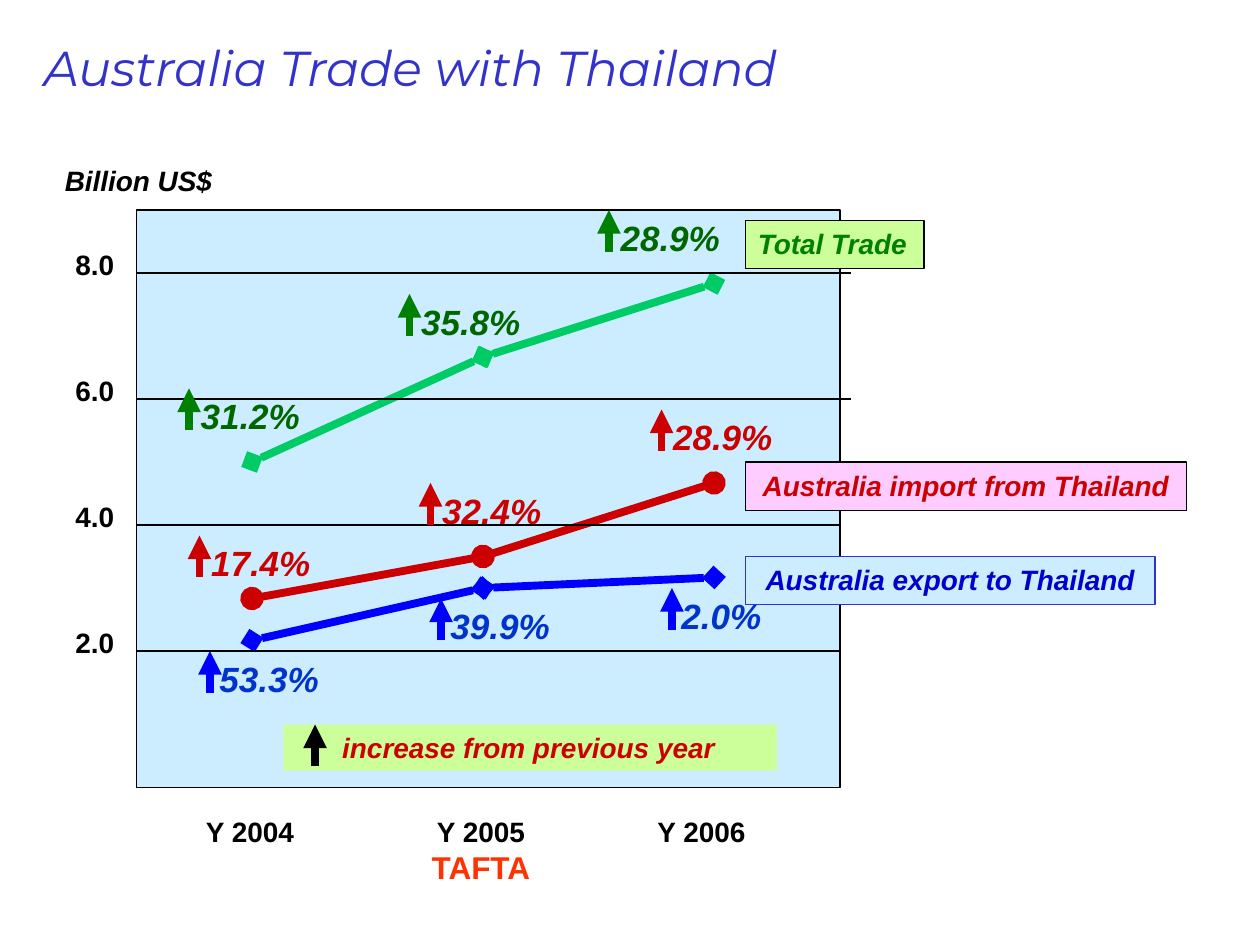
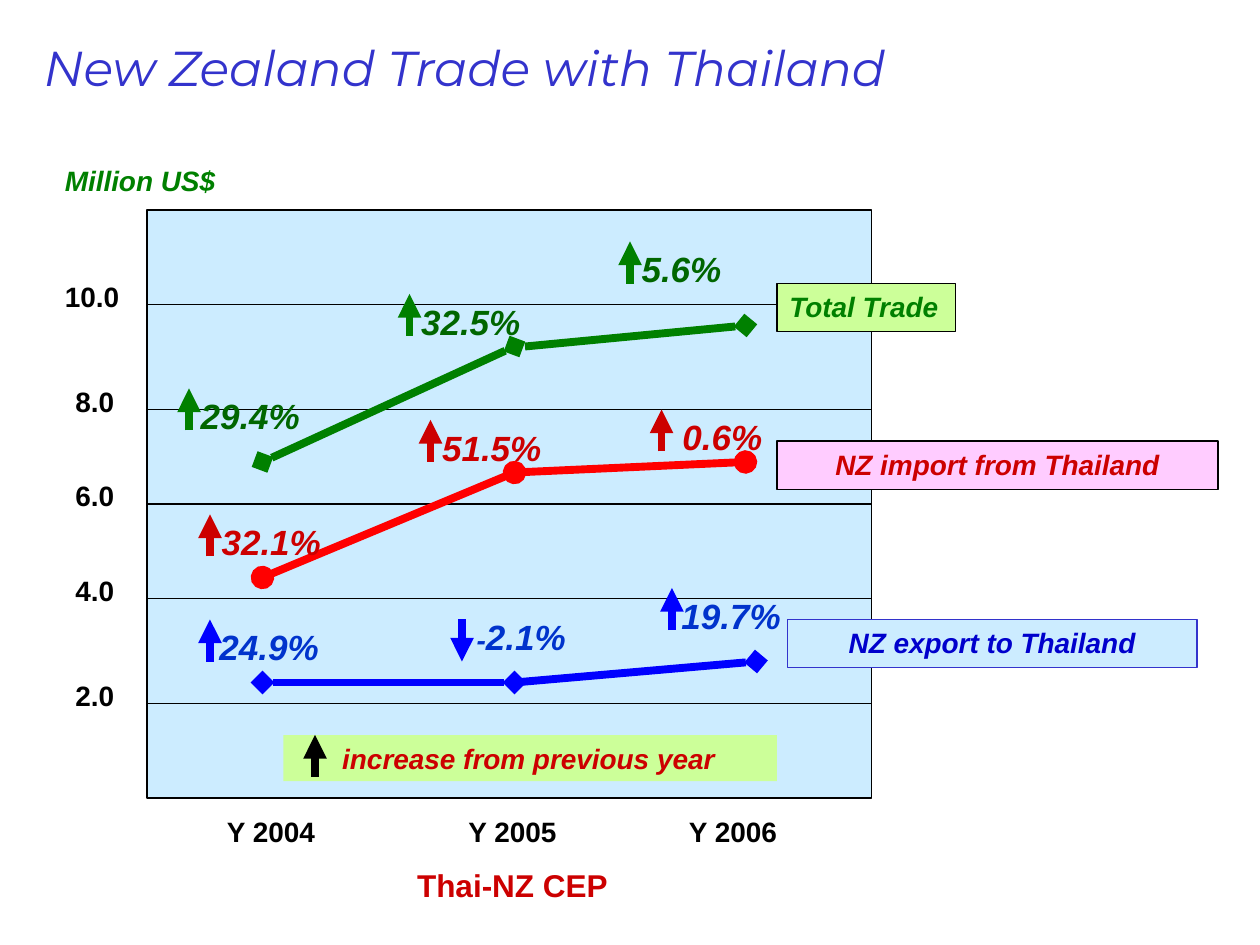
from dataclasses import dataclass
from itertools import pairwise

from lxml import etree
from pptx import Presentation
from pptx.dml.color import RGBColor
from pptx.enum.shapes import MSO_CONNECTOR, MSO_SHAPE
from pptx.enum.text import MSO_ANCHOR, PP_ALIGN
from pptx.oxml.ns import qn
from pptx.util import Pt

STRAIGHT = MSO_CONNECTOR.STRAIGHT
RECTANGLE = MSO_SHAPE.RECTANGLE
TOP, MIDDLE = MSO_ANCHOR.TOP, MSO_ANCHOR.MIDDLE
LEFT, CENTER = PP_ALIGN.LEFT, PP_ALIGN.CENTER
EMU_PER_PX = 7620


@dataclass(frozen=True)
class Theme:
    title_font: str = "Montserrat"
    body_font: str = "Arial"
    title_size: int = 28
    rate_size: int = 20
    note_size: int = 18
    body_size: int = 16
    hairline: float = 0.75
    trend_width: float = 4.5
    ink: str = "000000"
    title: str = "3333CC"
    panel: str = "CCECFF"
    lime: str = "CCFF99"
    pink: str = "FFCCFF"
    green: str = "008000"
    dark_green: str = "006600"
    bright_green: str = "00CC66"
    red: str = "CC0000"
    bright_red: str = "FF0000"
    orange: str = "FF3300"
    blue: str = "0000FF"
    label_blue: str = "0000CC"
    rate_blue: str = "0033CC"


THEME = Theme()


@dataclass(frozen=True)
class Box:
    x: int
    y: int
    w: int
    h: int

    def within(self, x, y, w, h):
        return Box(self.x + x, self.y + y, w, h)

    def emu(self):
        return [px(n) for n in (self.x, self.y, self.w, self.h)]


@dataclass(frozen=True)
class Flow:
    marker: str
    arrow: str
    rate_color: str
    rate_inset: int
    label_color: str
    label_fill: str
    label_line: str
    label_width: int
    label_align: int


TOTAL = Flow("diamond", THEME.green, THEME.dark_green, 21,
             THEME.green, THEME.lime, THEME.ink, 170, LEFT)
IMPORT = Flow("oval", THEME.red, THEME.red, 21,
              THEME.red, THEME.pink, THEME.ink, 420, CENTER)
EXPORT = Flow("diamond", THEME.blue, THEME.rate_blue, 19,
              THEME.label_blue, THEME.panel, THEME.title, 390, CENTER)


@dataclass(frozen=True)
class Series:
    flow: Flow
    color: str
    points: list
    label: str
    label_at: tuple
    rates: list
    gap: int = 0


@dataclass(frozen=True)
class Trade:
    title: str
    unit: str
    unit_color: str
    panel: Box
    grid: list
    overhangs: tuple
    grid_on_top: bool
    series: list
    legend_at: tuple
    years: list
    note: str
    note_color: str
    note_gap: int


def px(n):
    return int(n * EMU_PER_PX)


def rgb(color):
    return RGBColor.from_string(color)


def style(run, size, color, bold=True, italic=False, font=THEME.body_font):
    run.font.name, run.font.size = font, Pt(size)
    run.font.bold, run.font.italic = bold, italic
    run.font.color.rgb = rgb(color)


def write(shape, text, size, color, align=LEFT, anchor=TOP, inset=12, **face):
    frame = shape.text_frame
    frame.word_wrap = True
    frame.vertical_anchor = anchor
    frame.margin_left, frame.margin_right = px(inset), px(12)
    frame.margin_top = frame.margin_bottom = px(6)
    frame.text = text
    for paragraph in frame.paragraphs:
        paragraph.alignment = align
        for run in paragraph.runs:
            style(run, size, color, **face)
    return frame


def add_text(slide, box, *args, **options):
    return write(slide.shapes.add_textbox(*box.emu()), *args, **options)


def add_block(slide, box, fill, line=None):
    block = slide.shapes.add_shape(RECTANGLE, *box.emu())
    block.shadow.inherit = False
    block.fill.solid()
    block.fill.fore_color.rgb = rgb(fill)
    if line:
        block.line.color.rgb = rgb(line)
        block.line.width = Pt(THEME.hairline)
    else:
        block.line.fill.background()
    return block


def add_line(slide, box, start, end, color=THEME.ink, width=THEME.hairline, head=None, tail=None):
    ends = [px(n) for x, y in (start, end) for n in (box.x + x, box.y + y)]
    line = slide.shapes.add_connector(STRAIGHT, *ends)
    line.line.color.rgb = rgb(color)
    line.line.width = Pt(width)
    properties = line.element.spPr
    outline = properties.find(qn("a:ln"))
    for tag, marker in (("a:headEnd", head), ("a:tailEnd", tail)):
        if marker:
            etree.SubElement(outline, qn(tag), type=marker)
    etree.SubElement(properties, qn("a:effectLst"))


def draw_arrow(slide, box, start, end, color):
    add_line(slide, box, start, end, color, THEME.trend_width, tail="triangle")


def draw_title(slide, box, title):
    add_text(slide, box, title, THEME.title_size, THEME.title, anchor=MIDDLE,
             bold=False, italic=True, font=THEME.title_font)


def draw_grid(slide, panel, trade):
    for (y, _), overhang in zip(trade.grid, trade.overhangs):
        add_line(slide, panel, (0, y), (panel.w + overhang, y))


def draw_axis(slide, box, panel, trade):
    add_text(slide, box.within(50, 150, 170, 44), trade.unit, THEME.body_size,
             trade.unit_color, italic=True)
    for y, value in trade.grid:
        width = 20 * len(value) + (20 if len(value) == 3 else 10)
        add_text(slide, box.within(140 - width, panel.y + y - 30, width, 44),
                 value, THEME.body_size, THEME.ink)


def draw_rate(slide, box, rate, flow, extra):
    falling = rate.startswith("-")
    if falling:
        draw_arrow(slide, box, (20, 10), (20, 50), flow.arrow)
    else:
        draw_arrow(slide, box, (10, 40), (10, 0), flow.arrow)
    frame = add_text(slide, box, rate, THEME.rate_size, flow.rate_color,
                     inset=flow.rate_inset + extra, italic=True)
    if falling:
        paragraph = frame.paragraphs[0]
        paragraph.text = "-"
        style(paragraph.runs[0], THEME.body_size, flow.rate_color, italic=True)
        number = paragraph.add_run()
        number.text = rate[1:]
        style(number, THEME.rate_size, flow.rate_color, italic=True)


def draw_series(slide, panel, series, both_ends):
    flow = series.flow
    for index, ((x, y), end) in enumerate(pairwise(series.points)):
        head = flow.marker if both_ends or index == 0 else None
        add_line(slide, panel, (x + index * series.gap, y), end, series.color,
                 THEME.trend_width, head, flow.marker)
    label = add_block(slide, panel.within(*series.label_at, flow.label_width, 46),
                      flow.label_fill, flow.label_line)
    write(label, series.label, THEME.body_size, flow.label_color,
          flow.label_align, italic=True)


def draw_rates(slide, panel, series):
    for x, y, rate, extra in series.rates:
        draw_rate(slide, panel.within(x, y, 140, 52), rate, series.flow, extra)


def draw_legend(slide, box):
    write(add_block(slide, box, THEME.lime), "increase from previous year",
          THEME.body_size, THEME.red, inset=56, italic=True)
    draw_arrow(slide, box, (30, 40), (30, 0), THEME.ink)


def draw_years(slide, box, trade):
    for year, (x, width) in zip(("Y 2004", "Y 2005", "Y 2006"), trade.years):
        noted = year == "Y 2005"
        frame = add_text(slide, box.within(x, 0, width, 90 if noted else 44),
                         year, THEME.body_size, THEME.ink, CENTER, inset=18)
        if noted:
            note = frame.add_paragraph()
            note.text = trade.note
            note.alignment = CENTER
            note.space_before = Pt(trade.note_gap)
            style(note.runs[0], THEME.note_size, trade.note_color)


def draw_trade(slide, page, trade):
    panel = trade.panel
    add_block(slide, panel, THEME.panel, THEME.ink)
    draw_title(slide, page.within(30, 0, 1080, 127), trade.title)
    if not trade.grid_on_top:
        draw_grid(slide, panel, trade)
    for series in trade.series:
        draw_series(slide, panel, series, trade.grid_on_top)
    if trade.grid_on_top:
        draw_grid(slide, panel, trade)
    draw_axis(slide, page, panel, trade)
    draw_years(slide, page.within(0, 770, page.w, 90), trade)
    for series in trade.series:
        draw_rates(slide, panel, series)
    draw_legend(slide, panel.within(*trade.legend_at, 470, 44))


AUSTRALIA = Trade(
    "Australia Trade with Thailand", "Billion US$", THEME.ink, Box(130, 200, 670, 550),
    [(60, "8.0"), (180, "6.0"), (300, "4.0"), (420, "2.0")], (10, 10, 0, 0), True,
    [
        Series(TOTAL, THEME.bright_green, [(110, 240), (330, 140), (550, 70)],
               "Total Trade", (580, 10),
               [(40, 170, "31.2%", 0), (250, 80, "35.8%", 0), (440, 0, "28.9%", 0)]),
        Series(IMPORT, THEME.red, [(110, 370), (330, 330), (550, 260)],
               "Australia import from Thailand", (580, 240),
               [(50, 310, "17.4%", 0), (270, 260, "32.4%", 0), (490, 190, "28.9%", 0)]),
        Series(EXPORT, THEME.blue, [(110, 410), (330, 360), (550, 350)],
               "Australia export to Thailand", (580, 330),
               [(60, 420, "53.3%", 0), (280, 370, "39.9%", 0), (500, 360, "2.0%", 0)]),
    ],
    (140, 490), [(170, 130), (390, 130), (600, 130)], "TAFTA", THEME.orange, 0)

NEW_ZEALAND = Trade(
    "New Zealand Trade with Thailand", "Million US$", THEME.green, Box(140, 200, 690, 560),
    [(90, "10.0"), (190, "8.0"), (280, "6.0"), (370, "4.0"), (470, "2.0")], (0,) * 5, False,
    [
        Series(TOTAL, THEME.green, [(110, 240), (350, 130), (570, 110)],
               "Total Trade", (600, 70),
               [(30, 170, "29.4%", 0), (240, 80, "32.5%", 0), (450, 30, "5.6%", 0)], gap=10),
        Series(IMPORT, THEME.bright_red, [(110, 350), (350, 250), (570, 240)],
               "NZ import from Thailand", (600, 220),
               [(50, 290, "32.1%", 0), (260, 200, "51.5%", 0), (480, 190, "0.6%", 9)]),
        Series(EXPORT, THEME.blue, [(110, 450), (350, 450), (580, 430)],
               "NZ export to Thailand", (610, 390),
               [(50, 390, "24.9%", 0), (280, 380, "-2.1%", 15), (490, 360, "19.7%", 0)]),
    ],
    (130, 500), [(190, 130), (370, 230), (630, 130)], "Thai-NZ CEP", THEME.red, 10)


def main():
    deck = Presentation()
    page = Box(0, 0, 1200, 900)
    deck.slide_width, deck.slide_height = px(page.w), px(page.h)
    for trade in (AUSTRALIA, NEW_ZEALAND):
        draw_trade(deck.slides.add_slide(deck.slide_layouts[6]), page, trade)
    deck.save("out.pptx")


if __name__ == "__main__":
    main()
